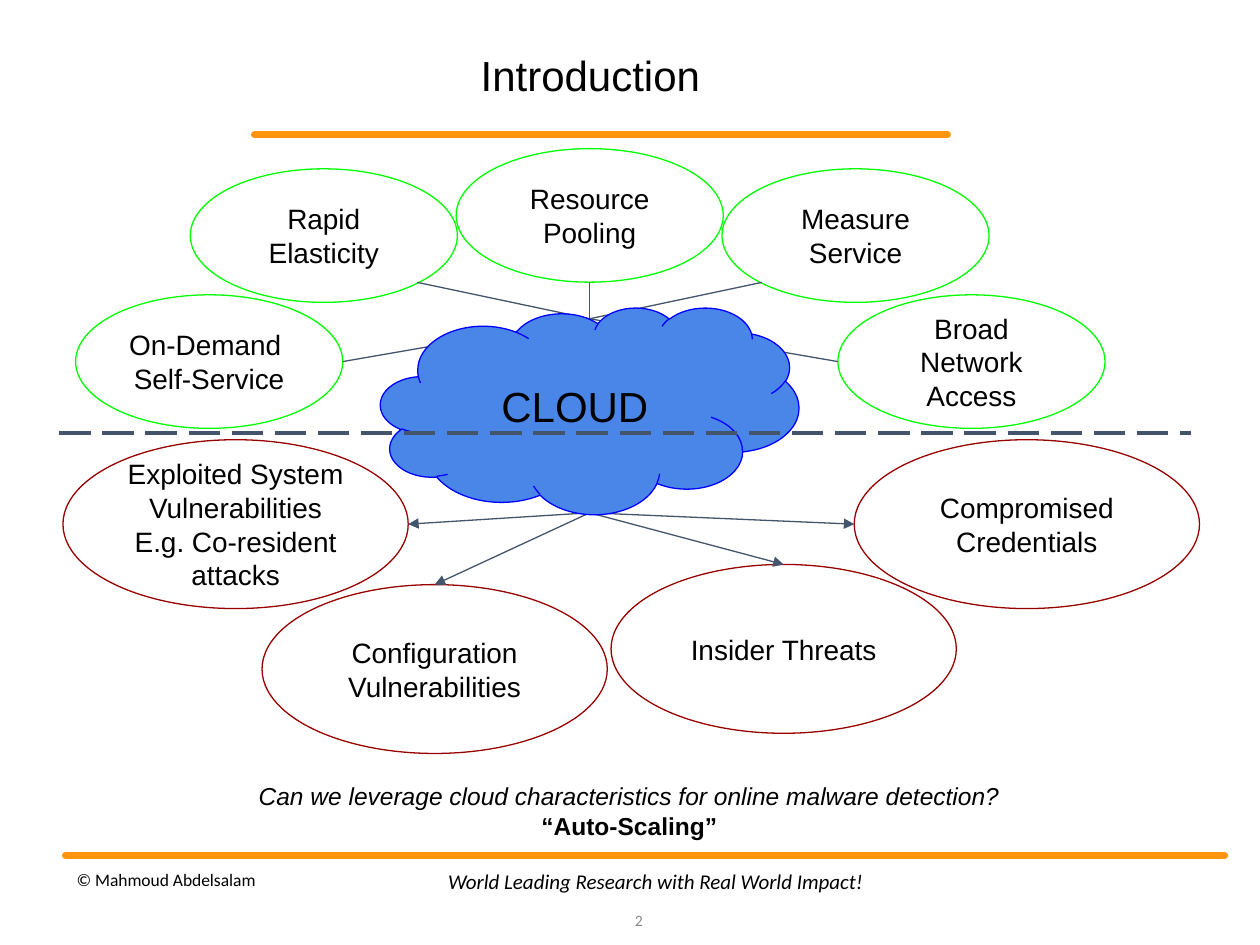
from typing import NamedTuple

from lxml.etree import SubElement
from pptx import Presentation
from pptx.dml.color import RGBColor
from pptx.enum.dml import MSO_LINE
from pptx.enum.shapes import MSO_CONNECTOR, MSO_SHAPE
from pptx.enum.text import MSO_ANCHOR, PP_ALIGN
from pptx.oxml.ns import qn
from pptx.util import Inches, Pt


class Node(NamedTuple):
    text: str
    left: float
    top: float
    across: float
    down: float


class Group(NamedTuple):
    nodes: list[Node]
    width: float
    height: float
    color: str
    hub: tuple[float, float]
    arrow: bool


NEAR, FAR = 0.15, 0.85
ORANGE, SLATE = "FF950E", "44546A"

TRAITS = Group([
    Node("On-Demand \nSelf-Service", 0.6, 2.34, 1, 0.5),
    Node("Rapid Elasticity", 1.51, 1.34, FAR, FAR),
    Node("Measure Service", 5.73, 1.34, NEAR, FAR),
    Node("Broad Network Access", 6.65, 2.34, 0, 0.5),
    Node("Resource Pooling", 3.62, 1.18, 0.5, 1),
], 2.12, 1.06, "00FF00", (4.68, 2.53), False)

THREATS = Group([
    Node("Exploited System Vulnerabilities\nE.g. Co-resident attacks",
         0.5, 3.49, 1, 0.5),
    Node("Configuration Vulnerabilities", 2.08, 4.64, 0.5, 0),
    Node("Insider Threats", 4.85, 4.48, 0.5, 0),
    Node("Compromised Credentials", 6.78, 3.49, 0, 0.5),
], 2.74, 1.34, "980000", (4.68, 4.07), True)


def paint(code: str) -> RGBColor:
    return RGBColor.from_string(code)


def write(shape, text: str, *, size=16, face="Arial", color="000000",
          align=PP_ALIGN.CENTER, anchor=MSO_ANCHOR.MIDDLE, inset=0.1,
          space=None, styles=("",)) -> None:
    frame = shape.text_frame
    frame.word_wrap = True
    frame.vertical_anchor = anchor
    frame.margin_left = frame.margin_right = Inches(0.1)
    frame.margin_top = frame.margin_bottom = Inches(inset)
    for index, words in enumerate(text.split("\n")):
        para = frame.paragraphs[0] if index == 0 else frame.add_paragraph()
        para.alignment = align
        para.line_spacing = space
        run = para.add_run()
        run.text = words
        font = run.font
        font.size, font.name = Pt(size), face
        font.color.rgb = paint(color)
        style = styles[min(index, len(styles) - 1)]
        font.italic = style == "italic"
        font.bold = style == "bold"


def label(slide, box: tuple, text: str, **style) -> None:
    write(slide.shapes.add_textbox(*map(Inches, box)), text, **style)


def shape(slide, kind, box: tuple, fill: str, edge: str, text: str,
          size: int = 16) -> None:
    item = slide.shapes.add_shape(kind, *map(Inches, box))
    item.shadow.inherit = False
    item.fill.solid()
    item.fill.fore_color.rgb = paint(fill)
    item.line.color.rgb = paint(edge)
    item.line.width = Pt(0.75)
    write(item, text, size=size)


def link(slide, start: tuple, end: tuple, color: str = SLATE,
         width: float = 0.75, dash=None, arrow: bool = False,
         round_cap: bool = False) -> None:
    item = slide.shapes.add_connector(
        MSO_CONNECTOR.STRAIGHT, *map(Inches, (*start, *end)))
    item.line.color.rgb = paint(color)
    item.line.width = Pt(width)
    if dash:
        item.line.dash_style = dash
    props = item.line._get_or_add_ln()
    if round_cap:
        props.set("cap", "rnd")
    if arrow:
        SubElement(props, qn("a:tailEnd"), type="triangle")
    SubElement(item._element.spPr, qn("a:effectLst"))


def draw(slide, group: Group) -> None:
    wide, high = group.width, group.height
    for node in group.nodes:
        shape(slide, MSO_SHAPE.OVAL, (node.left, node.top, wide, high),
              "FFFFFF", group.color, node.text)
    for node in group.nodes:
        end = (node.left + node.across * wide, node.top + node.down * high)
        link(slide, group.hub, end, arrow=group.arrow)


def main() -> None:
    deck = Presentation()
    deck.slide_width, deck.slide_height = Inches(10), Inches(7.5)
    slide = deck.slides.add_slide(deck.slide_layouts[6])

    for left, right, top in ((2.02, 7.52, 1.07), (0.52, 9.72, 6.79)):
        link(slide, (left, top), (right, top), ORANGE, 4, round_cap=True)
    label(slide, (1.99, 0.34, 5.39, 0.51), "Introduction", size=24,
          anchor=MSO_ANCHOR.BOTTOM, inset=0.05, space=0.9)

    draw(slide, TRAITS)
    draw(slide, THREATS)
    shape(slide, MSO_SHAPE.CLOUD, (3.02, 2.44, 3.32, 1.64),
          "4A86E8", "0000FF", "CLOUD", 24)
    link(slide, (0.47, 3.44), (9.45, 3.44), width=2.25,
         dash=MSO_LINE.LONG_DASH)

    label(slide, (1.17, 6.1, 7.65, 0.57),
          "Can we leverage cloud characteristics for online malware "
          "detection?\n“Auto-Scaling”",
          size=14, anchor=MSO_ANCHOR.TOP, styles=("italic", "bold"))
    label(slide, (0.51, 6.8, 2.75, 0.36), "© Mahmoud Abdelsalam", size=10,
          face="Calibri", align=PP_ALIGN.LEFT, inset=0.05)
    label(slide, (3.02, 6.79, 4.37, 0.4),
          "World Leading Research with Real World Impact!", size=12,
          face="Calibri", inset=0.05, styles=("italic",))
    label(slide, (4.8, 7.1, 0.4, 0.4), "2", size=9, face="Calibri",
          color="888888", align=PP_ALIGN.RIGHT, inset=0.05)
    deck.save("out.pptx")


if __name__ == "__main__":
    main()
